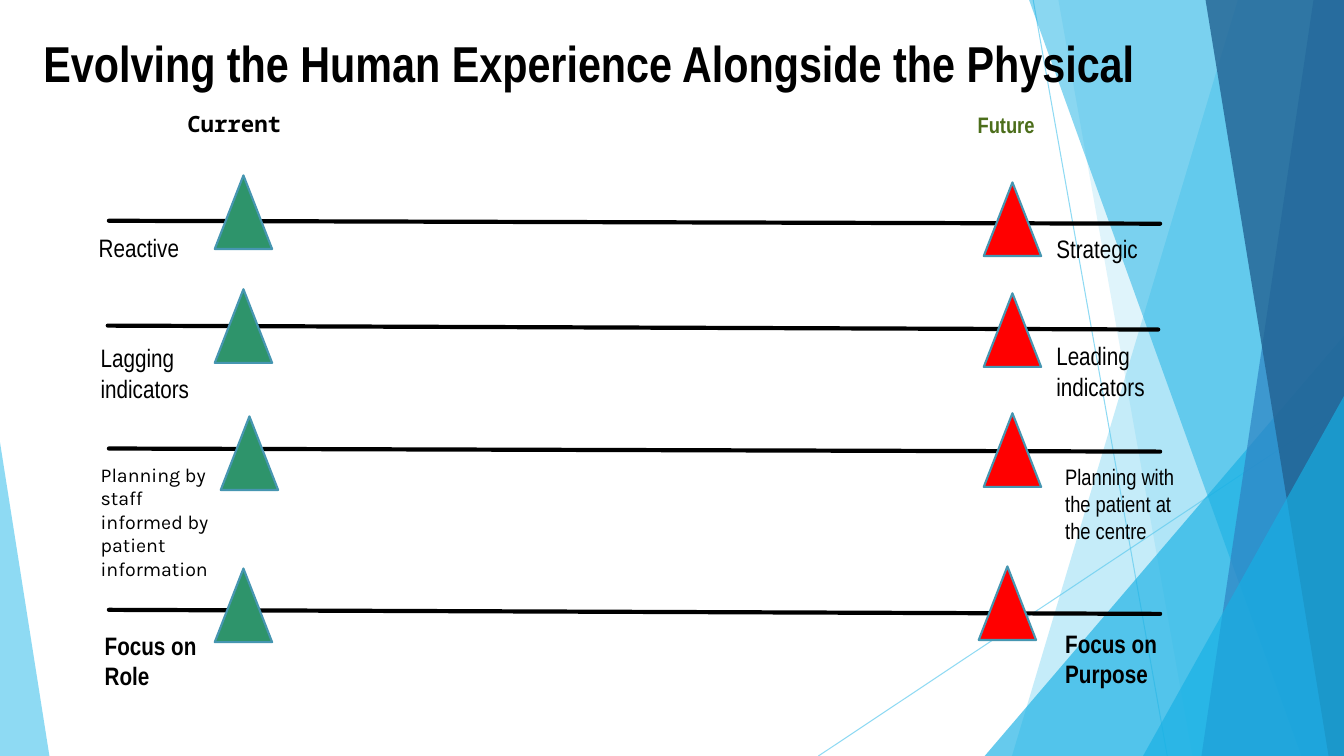
from lxml import etree
from pptx import Presentation
from pptx.dml.color import RGBColor
from pptx.enum.shapes import MSO_CONNECTOR, MSO_SHAPE
from pptx.enum.text import MSO_ANCHOR, MSO_AUTO_SIZE, PP_ALIGN
from pptx.oxml.ns import qn
from pptx.util import Pt

STRAIGHT = MSO_CONNECTOR.STRAIGHT
TRIANGLE = MSO_SHAPE.ISOSCELES_TRIANGLE
MIDDLE, TOP = MSO_ANCHOR.MIDDLE, MSO_ANCHOR.TOP
GROW, FIXED = MSO_AUTO_SIZE.SHAPE_TO_FIT_TEXT, MSO_AUTO_SIZE.NONE
LEFT = PP_ALIGN.LEFT

BLACK = RGBColor(0x00, 0x00, 0x00)
SKY = RGBColor(0x5F, 0xCB, 0xEF)
CYAN = RGBColor(0x17, 0xB0, 0xE4)
BLUE = RGBColor(0x2E, 0x83, 0xC3)
NAVY = RGBColor(0x22, 0x62, 0x92)
GREEN = RGBColor(0x2E, 0x94, 0x6B)
RED = RGBColor(0xFF, 0x00, 0x00)
OLIVE = RGBColor(0x4C, 0x6E, 0x1B)
OUTLINE = RGBColor(0x46, 0x96, 0xB1)

NARROW, KARLA, MONO = "Arial Narrow", "Karla", "Noto Sans Mono"
WIDTH, HEIGHT = 960, 540
LABEL_WIDTH = 104.4
MARKER_WIDTH, MARKER_HEIGHT = 41, 52.6

# Background facets: x at the top, x at the bottom, colour, opacity
BACK_FACETS = [(884.2, 722.9, SKY, 36), (756, 851.8, SKY, 20)]
FRONT_FACETS = [(735.1, 929.5, CYAN, 50), (938.2, 858.2, BLUE, 70),
                (861.1, 949, NAVY, 80)]

# Each scale: line (left, right, start y, end y), then for the current and
# the future end: marker (x, y), label (x, y, height, text, size, font, bold)
SCALES = [
    ((77.8, 828.7, 157.7, 159.8),
     (153.4, 125.3), (63.4, 162.7, 28.8, "Reactive", 18, NARROW, False),
     (702.7, 130.3), (747.4, 163.4, 28.8, "Strategic", 18, NARROW, False)),
    ((77, 827.3, 232.6, 235.4),
     (153.4, 206.6), (64.8, 241.2, 51, "Lagging indicators", 18, NARROW, False),
     (702.7, 209.5), (747.4, 239.8, 51, "Leading indicators", 18, NARROW, False)),
    ((77.8, 828.7, 320.4, 322.6),
     (157.7, 297.4), (64.8, 326.9, 74.9,
                      "Planning by staff informed by patient information",
                      14, KARLA, False),
     (702.7, 295.2), (753.8, 327.6, 65.5,
                      "Planning with the patient at the centre",
                      16, NARROW, False)),
    ((77.8, 828.7, 435.6, 438.5),
     (153.4, 406.1), (67.7, 446.4, 51, "Focus on Role", 18, NARROW, True),
     (699.1, 404.6), (753.8, 445, 51, "Focus on Purpose", 18, NARROW, True)),
]


class SlideBuilder:
    def __init__(self, page):
        self.page = page
        self.shapes = page.shapes

    def set_opacity(self, shape, percent):
        for colour in shape.element.spPr.iter(qn("a:srgbClr")):
            alpha = etree.SubElement(colour, qn("a:alpha"))
            alpha.set("val", str(percent * 1000))

    def paint(self, shape, fill, outline=None, opacity=100):
        shape.shadow.inherit = False
        shape.fill.solid()
        shape.fill.fore_color.rgb = fill
        if outline is None:
            shape.line.fill.background()
        else:
            shape.line.color.rgb = outline
            shape.line.width = Pt(1.5)
        if opacity < 100:
            self.set_opacity(shape, opacity)

    def line(self, x1, y1, x2, y2, colour, weight, opacity=100):
        connector = self.shapes.add_connector(
            STRAIGHT, Pt(x1), Pt(y1), Pt(x2), Pt(y2))
        connector.line.color.rgb = colour
        connector.line.width = Pt(weight)
        properties = connector.element.spPr
        properties.find(qn("a:ln")).set("cap", "rnd")
        etree.SubElement(properties, qn("a:effectLst"))
        if opacity < 100:
            self.set_opacity(connector, opacity)

    def triangle(self, x, y, width, height, fill, apex=0.5, outline=None,
                 opacity=100):
        shape = self.shapes.add_shape(
            TRIANGLE, Pt(x), Pt(y), Pt(width), Pt(height))
        shape.adjustments[0] = apex
        self.paint(shape, fill, outline, opacity)

    def facet(self, top_x, bottom_x, fill, opacity):
        outline = self.shapes.build_freeform(Pt(top_x), Pt(0))
        corners = [(WIDTH, 0), (WIDTH, HEIGHT), (bottom_x, HEIGHT)]
        outline.add_line_segments([(Pt(x), Pt(y)) for x, y in corners])
        self.paint(outline.convert_to_shape(), fill, opacity=opacity)

    def set_text(self, box, text, size, font, bold, colour, anchor, fit):
        frame = box.text_frame
        frame.word_wrap = True
        frame.auto_size = fit
        frame.vertical_anchor = anchor
        para = frame.paragraphs[0]
        para.alignment = LEFT
        span = para.add_run()
        span.text = text
        span.font.size = Pt(size)
        span.font.name = font
        span.font.bold = bold
        span.font.color.rgb = colour

    def label(self, x, y, height, text, size, font, bold, colour=BLACK):
        box = self.shapes.add_textbox(
            Pt(x), Pt(y), Pt(LABEL_WIDTH), Pt(height))
        self.set_text(box, text, size, font, bold, colour, TOP, GROW)

    def title(self, x, y, width, height, text):
        box = self.shapes.title
        box.left, box.top = Pt(x), Pt(y)
        box.width, box.height = Pt(width), Pt(height)
        self.set_text(box, text, 36, NARROW, True, BLACK, MIDDLE, FIXED)
        # Bring the title in front of the background
        box.element.getparent().append(box.element)

    def marker(self, x, y, fill):
        self.triangle(x, y, MARKER_WIDTH, MARKER_HEIGHT, fill, outline=OUTLINE)


def main():
    deck = Presentation()
    deck.slide_width, deck.slide_height = Pt(WIDTH), Pt(HEIGHT)
    builder = SlideBuilder(deck.slides.add_slide(deck.slide_layouts[5]))

    # Background
    builder.line(738, 0, 833.8, HEIGHT, SKY, 0.75, 70)
    builder.line(WIDTH, 290.2, 584.6, HEIGHT, SKY, 0.75, 70)
    for facet in BACK_FACETS:
        builder.facet(*facet)
    builder.triangle(703.4, 239.8, 256.6, 300.2, CYAN, apex=1, opacity=66)
    for facet in FRONT_FACETS:
        builder.facet(*facet)
    builder.triangle(816.5, 283, 143.5, 257, CYAN, apex=1, opacity=66)
    builder.triangle(0, 316, 35.3, 224, SKY, apex=0, opacity=70)

    # Title and column headings
    builder.title(23.8, 18, 828, 53.3,
                  "Evolving the Human Experience Alongside the Physical")
    builder.label(126.7, 74.9, 26.6, "Current", 16, MONO, True)
    builder.label(691.2, 75.6, 26.6, "Future", 16, NARROW, True, OLIVE)

    # Scales from current to future
    for (left, right, start, end), now, now_label, goal, goal_label in SCALES:
        builder.line(left, start, right, end, BLACK, 3)
        builder.label(*now_label)
        builder.label(*goal_label)
        builder.marker(*now, GREEN)
        builder.marker(*goal, RED)

    deck.save("out.pptx")


if __name__ == "__main__":
    main()
